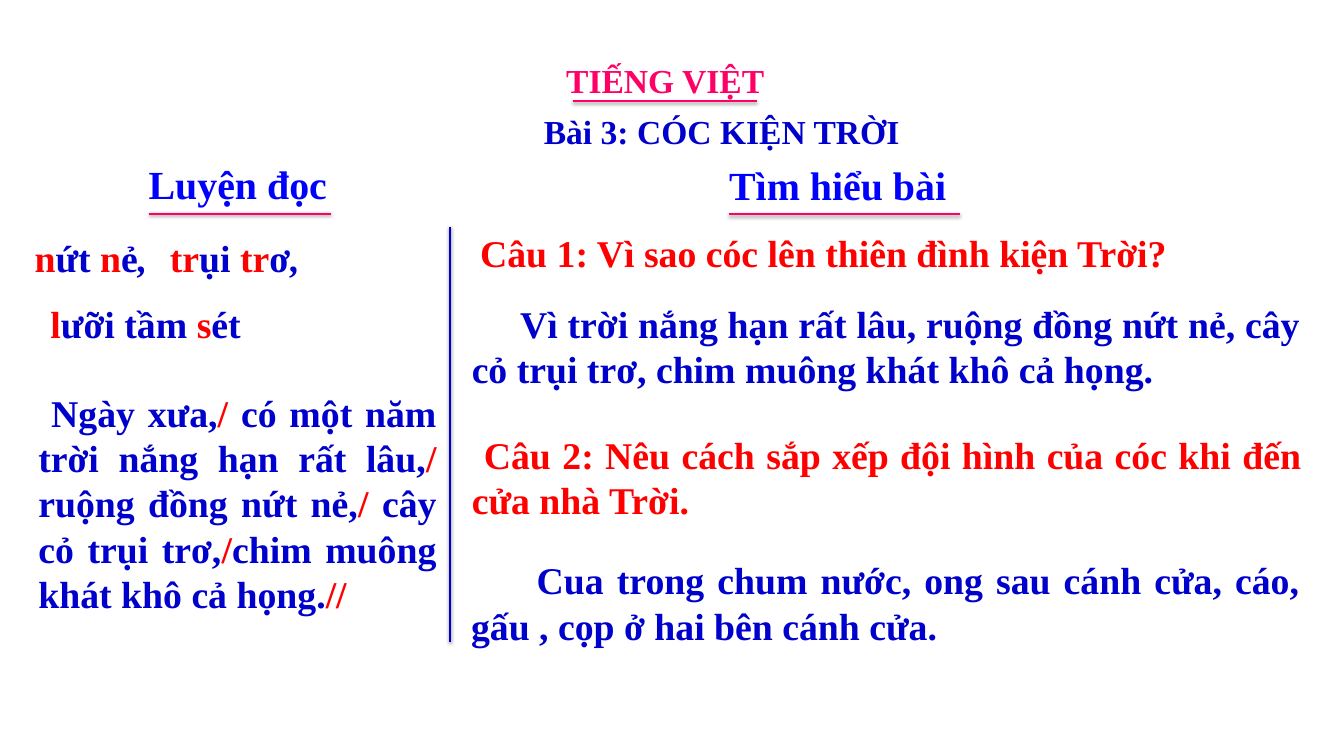
from lxml import etree
from pptx import Presentation
from pptx.dml.color import RGBColor
from pptx.enum.shapes import MSO_CONNECTOR
from pptx.enum.text import MSO_ANCHOR, MSO_AUTO_SIZE, PP_ALIGN
from pptx.oxml.ns import qn
from pptx.util import Pt

LEFT, CENTER, JUSTIFY = PP_ALIGN.LEFT, PP_ALIGN.CENTER, PP_ALIGN.JUSTIFY
TOP, NO_FIT, STRAIGHT = MSO_ANCHOR.TOP, MSO_AUTO_SIZE.NONE, MSO_CONNECTOR.STRAIGHT

PX = 9144
W, H = 1780, 1000
FONT = "Times New Roman"
PINK, RED, NAVY, BLUE = "FF0066", "FF0000", "0000CC", "0000FF"

LESSON = ("Bài 3: CÓC KIỆN TRỜI", (640, 139, 632, 70))
HEADINGS = [
    ("TIẾNG VIỆT", (740, 75, 285, 64), 32, PINK, LEFT, (10, 5)),
    ("Luyện đọc", (188, 207, 254, 72), 38, BLUE, CENTER, (8, 4)),
    ("Tìm hiểu bài", (957, 209, 305, 72), 38, BLUE, CENTER, (8, 4)),
]
BODY = [
    ((36, 306, 274, 71), 0, [("n", RED), ("ứt ", NAVY), ("n", RED), ("ẻ", NAVY), (",", NAVY, True)]),
    ((215, 306, 261, 71), 0, [("tr", RED), ("ụi ", NAVY), ("tr", RED), ("ơ", NAVY), (",", NAVY, True)]),
    ((57, 393, 317, 71), 0, [("l", RED), ("ưỡi tầm ", NAVY), ("s", RED), ("ét", NAVY)]),
    ((41, 511, 547, 313), 17, [
        ("Ngày xưa,", NAVY), ("/ ", RED),
        ("có một năm trời nắng hạn rất lâu,", NAVY), ("/ ", RED),
        ("ruộng đồng nứt nẻ,", NAVY), ("/ ", RED),
        ("cây cỏ trụi trơ,", NAVY), ("/", RED),
        ("chim muông khát khô cả họng.", NAVY), ("//", RED)]),
    ((613, 300, 1119, 71), 13, [("Câu 1: Vì sao cóc lên thiên đình kiện Trời?", RED)]),
    ((615, 393, 1117, 131), 64, [
        ("Vì trời nắng hạn rất lâu, ruộng đồng nứt nẻ, cây cỏ trụi trơ, "
         "chim muông khát khô cả họng.", NAVY)]),
    ((615, 567, 1119, 192), 16, [
        ("Câu 2: Nêu cách sắp xếp đội hình của cóc khi đến cửa nhà Trời.", RED)]),
    ((614, 733, 1117, 131), 87, [
        ("Cua trong chum nước, ong sau cánh cửa, cáo, gấu , cọp ở hai bên cánh cửa.", NAVY)]),
]
LINES = [
    (759, 134, 1003, 134, PINK),
    (197, 283, 438, 283, PINK),
    (965, 284, 1272, 284, PINK),
    (596, 300, 596, 850, NAVY),
]


def rgb(color):
    return RGBColor.from_string(color)


def emu(values):
    return [v * PX for v in values]


def write(sp, runs, size, align, inset=(10, 5), wrap=True, indent=0):
    tf = sp.text_frame
    tf.word_wrap, tf.auto_size, tf.vertical_anchor = wrap, NO_FIT, TOP
    tf.margin_left = tf.margin_right = inset[0] * PX
    tf.margin_top = tf.margin_bottom = inset[1] * PX
    p = tf.paragraphs[0]
    p.alignment = align
    if indent:
        p._p.get_or_add_pPr().set("indent", str(indent * PX))
    for text, color, *italic in runs:
        r = p.add_run()
        r.text = text
        r.font.name, r.font.size, r.font.bold = FONT, Pt(size), True
        r.font.color.rgb = rgb(color)
        if italic:
            r.font.italic = True


def add_line(s, x1, y1, x2, y2, color):
    line = s.shapes.add_connector(STRAIGHT, *emu((x1, y1, x2, y2)))
    line.line.color.rgb = rgb(color)
    line.line.width = Pt(2)
    effects = etree.SubElement(line._element.spPr, qn("a:effectLst"))
    shadow = etree.SubElement(effects, qn("a:outerShdw"), blurRad="40000",
                              dist="20000", dir="5400000", rotWithShape="0")
    black = etree.SubElement(shadow, qn("a:srgbClr"), val="000000")
    etree.SubElement(black, qn("a:alpha"), val="38000")


prs = Presentation()
prs.slide_width, prs.slide_height = emu((W, H))
s = prs.slides.add_slide(prs.slide_layouts[5])

text, box = LESSON
title = s.shapes.title
title.left, title.top, title.width, title.height = emu(box)
write(title, [(text, NAVY)], 32, CENTER, (16, 8))

for text, box, size, color, align, inset in HEADINGS:
    write(s.shapes.add_textbox(*emu(box)), [(text, color)], size, align, inset, wrap=False)
for box, indent, runs in BODY:
    write(s.shapes.add_textbox(*emu(box)), runs, 36, JUSTIFY, indent=indent)
for line in LINES:
    add_line(s, *line)

prs.save("out.pptx")
